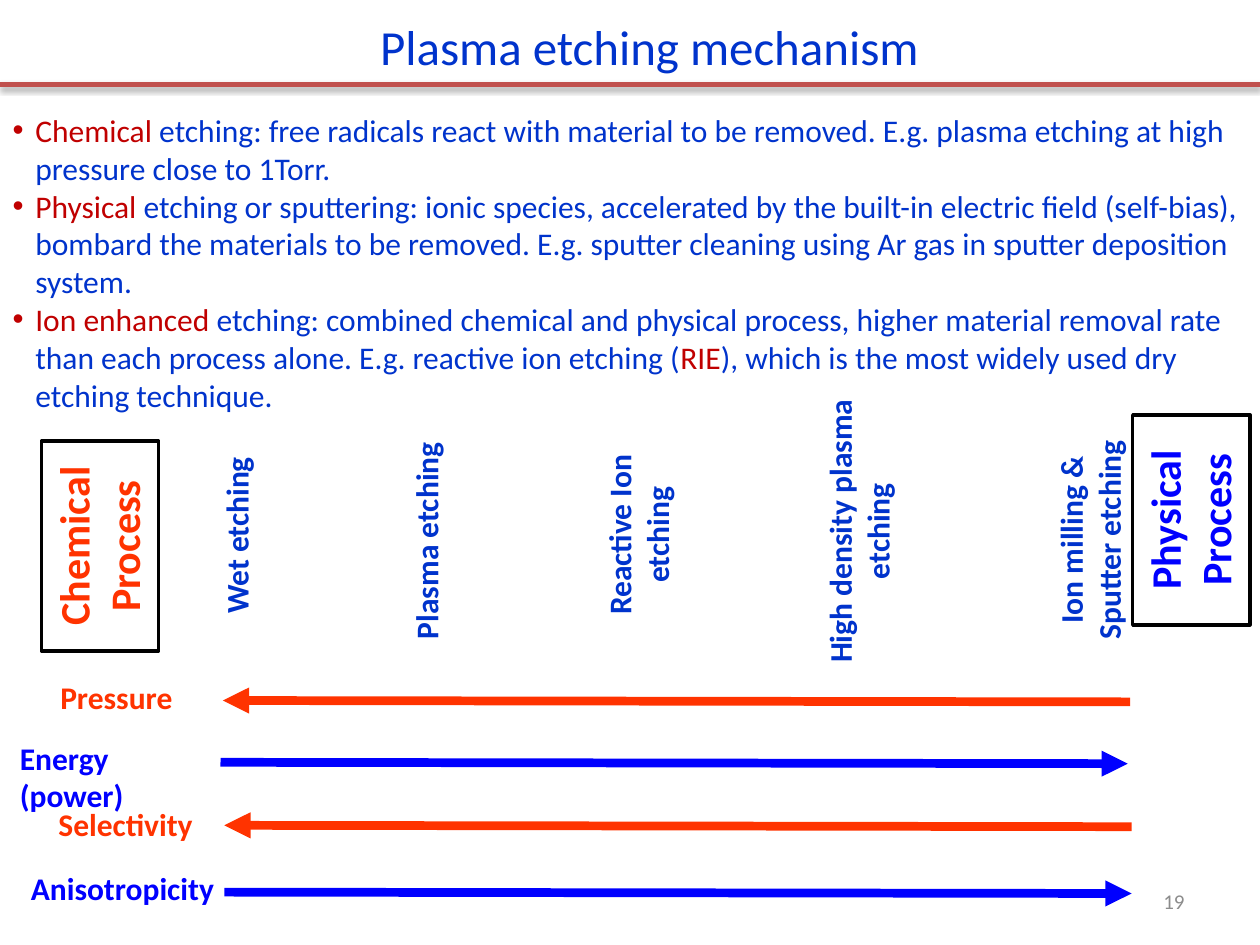
from lxml.etree import SubElement
from pptx import Presentation
from pptx.dml.color import RGBColor
from pptx.enum.shapes import MSO_CONNECTOR as CONN, MSO_SHAPE as SHAPE
from pptx.enum.text import MSO_ANCHOR as ANCHOR, MSO_AUTO_SIZE as AUTO, PP_ALIGN as ALIGN
from pptx.oxml.ns import qn
from pptx.util import Pt

COLORS = {"text": "0033CC", "key": "C00000", "chemical": "FF3300", "physical": "0000FF",
          "rule": "C0504D", "black": "000000", "number": "8C8C8C"}
FONT = "Calibri"

TITLE = "Plasma etching mechanism"
BULLETS = [
    [("Chemical", "key"),
     (" etching: free radicals react with material to be removed. E.g. plasma etching "
      "at high pressure close to 1Torr.", "text")],
    [("Physical", "key"),
     (" etching or sputtering: ionic species, accelerated by the built-in electric field "
      "(self-bias), bombard the materials to be removed. E.g. sputter cleaning using Ar gas "
      "in sputter deposition system.", "text")],
    [("Ion enhanced ", "key"),
     ("etching: combined chemical and physical process, higher material removal rate than "
      "each process alone. E.g. reactive ion etching (", "text"),
     ("RIE", "key"),
     ("), which is the most widely used dry etching technique.", "text")],
]
# text, color, centre x, centre y
PROCESSES = [("Chemical Process", "chemical", 57.2, 312),
             ("Physical Process", "physical", 680.8, 297)]
# text, centre x, centre y, length, thickness
METHODS = [("Wet etching", 135, 306, 130, 29),
           ("Plasma etching", 243.4, 309, 148, 29),
           ("Reactive Ion etching", 364.7, 305.6, 130, 51),
           ("High density plasma etching", 490.7, 303.5, 175, 51),
           ("Ion milling & Sputter etching", 622.8, 308.5, 161, 51)]
# text, color, label left, label top, label width, alignment, arrow left, arrow top
TRENDS = [("Pressure", "chemical", 16, 384, 101, ALIGN.CENTER, 127.4, 400.3),
          ("Energy (power)", "physical", 4.3, 418.5, 128, ALIGN.LEFT, 126, 435.6),
          ("Selectivity", "chemical", 12.3, 456.5, 119, ALIGN.CENTER, 128.2, 471.6),
          ("Anisotropicity", "physical", 0, 493, 140, ALIGN.CENTER, 128.2, 509.8)]
ARROW_LENGTH, ARROW_DROP = 518.4, 0.8


def rgb(name):
    return RGBColor.from_string(COLORS[name])


def place(s, left, top, width, height):
    s.left, s.top, s.width, s.height = Pt(left), Pt(top), Pt(width), Pt(height)


def add_run(p, text, color, size, bold=False):
    r = p.add_run()
    r.text = text
    r.font.name, r.font.size, r.font.bold = FONT, Pt(size), bold
    r.font.color.rgb = rgb(color)


def add_label(s, text, color, size, align=ALIGN.CENTER, bold=True, anchor=ANCHOR.TOP):
    tf = s.text_frame
    tf.word_wrap = True
    tf.vertical_anchor = anchor
    p = tf.paragraphs[0]
    p.alignment = align
    add_run(p, text, color, size, bold)


def centred(x, y, width, height):
    return Pt(x - width / 2), Pt(y - height / 2), Pt(width), Pt(height)


def add_line(slide, start, end, color, width):
    """Draw a flat line and return it with its empty effect list."""
    line = slide.shapes.add_connector(CONN.STRAIGHT, *map(Pt, start + end))
    line.line.color.rgb = rgb(color)
    line.line.width = Pt(width)
    effects = SubElement(line._element.spPr, qn("a:effectLst"))
    return line, effects


def add_trend(slide, text, color, left, top, width, align, x, y):
    start, end = (x, y), (x + ARROW_LENGTH, y + ARROW_DROP)
    if color == "chemical":
        start, end = end, start
    arrow, _ = add_line(slide, start, end, color, 5)
    SubElement(arrow.line._get_or_add_ln(), qn("a:tailEnd"), type="triangle")
    box = slide.shapes.add_textbox(Pt(left), Pt(top), Pt(width), Pt(29))
    add_label(box, text, color, 18, align)


def add_header(slide):
    title = slide.shapes.title
    place(title, 210, 5.8, 325.4, 41)
    add_label(title, TITLE, "text", 28, ALIGN.LEFT, bold=False)
    title.text_frame.word_wrap = False
    title.text_frame.auto_size = AUTO.NONE

    _, effects = add_line(slide, (0, 48.2), (720, 48.2), "rule", 3)
    shadow = SubElement(effects, qn("a:outerShdw"), blurRad=str(Pt(3.1)), dist=str(Pt(1.6)),
                        dir="5400000", rotWithShape="0")
    black = SubElement(shadow, qn("a:srgbClr"), val=COLORS["black"])
    SubElement(black, qn("a:alpha"), val="38000")


def add_bullets(slide):
    body = slide.placeholders[1]
    place(body, 0, 59.8, 720, 181.4)
    tf = body.text_frame
    tf.auto_size = AUTO.NONE
    for i, runs in enumerate(BULLETS):
        p = tf.paragraphs[0] if i == 0 else tf.add_paragraph()
        p.space_before = Pt(0)
        pPr = p._p.get_or_add_pPr()
        pPr.set("marL", str(Pt(13)))
        pPr.set("indent", str(Pt(-13)))
        SubElement(pPr, qn("a:buChar"), char="•")
        for text, color in runs:
            add_run(p, text, color, 18)


def main():
    prs = Presentation()
    prs.slide_width, prs.slide_height = Pt(720), Pt(540)
    slide = prs.slides.add_slide(prs.slide_layouts[1])

    for text, color, x, y in PROCESSES:
        s = slide.shapes.add_shape(SHAPE.RECTANGLE, *centred(x, y, 120, 67))
        s.rotation = 270
        s.shadow.inherit = False
        s.fill.background()
        s.line.color.rgb = rgb("black")
        s.line.width = Pt(2)
        add_label(s, text, color, 24)
    for text, x, y, length, thickness in METHODS:
        s = slide.shapes.add_textbox(*centred(x, y, length, thickness))
        s.rotation = 270
        add_label(s, text, "text", 18)
    for trend in TRENDS:
        add_trend(slide, *trend)

    add_header(slide)
    add_bullets(slide)
    number = slide.shapes.add_textbox(Pt(516), Pt(500.4), Pt(168), Pt(28.8))
    add_label(number, "19", "number", 12, ALIGN.RIGHT, False, ANCHOR.MIDDLE)
    prs.save("out.pptx")


if __name__ == "__main__":
    main()
